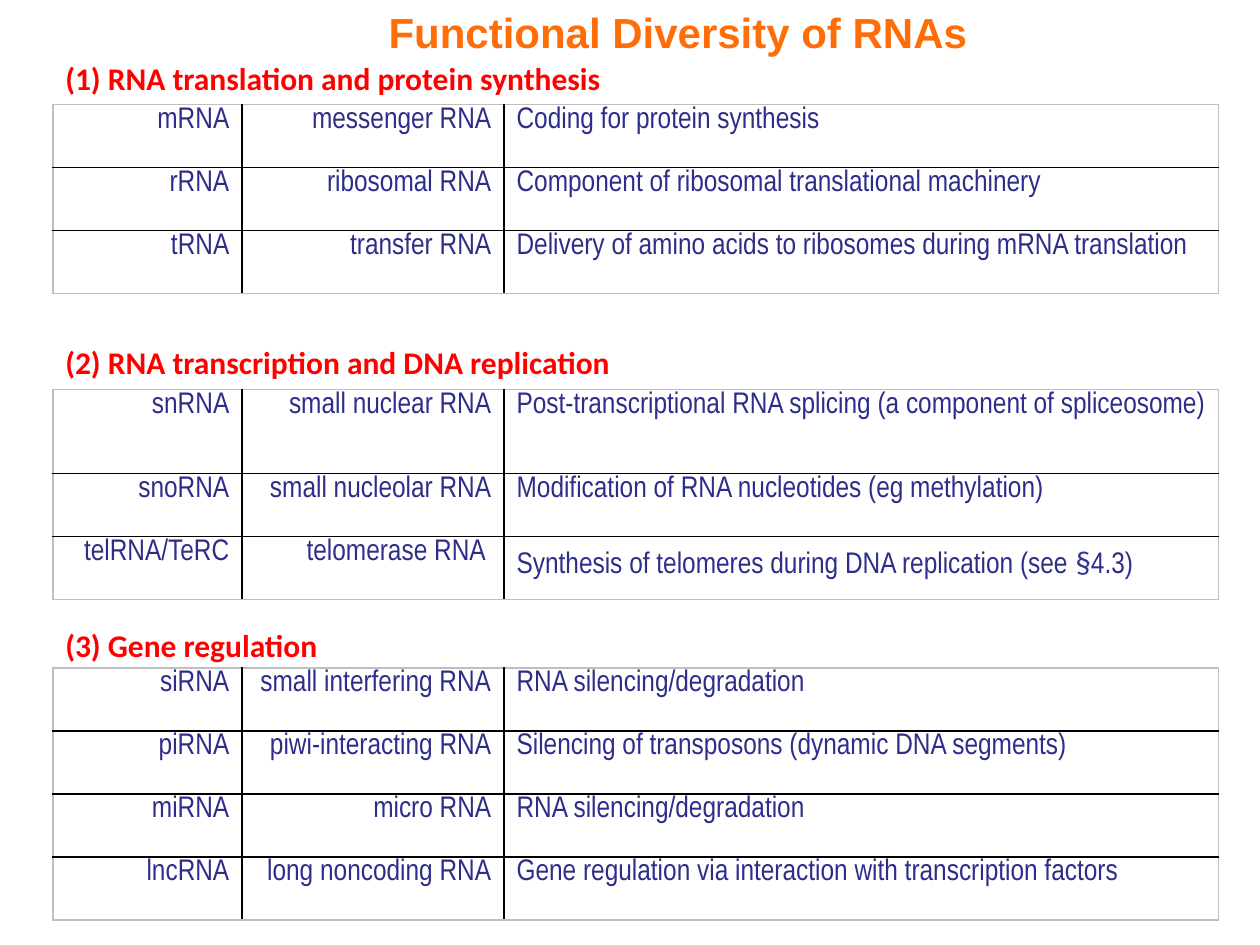
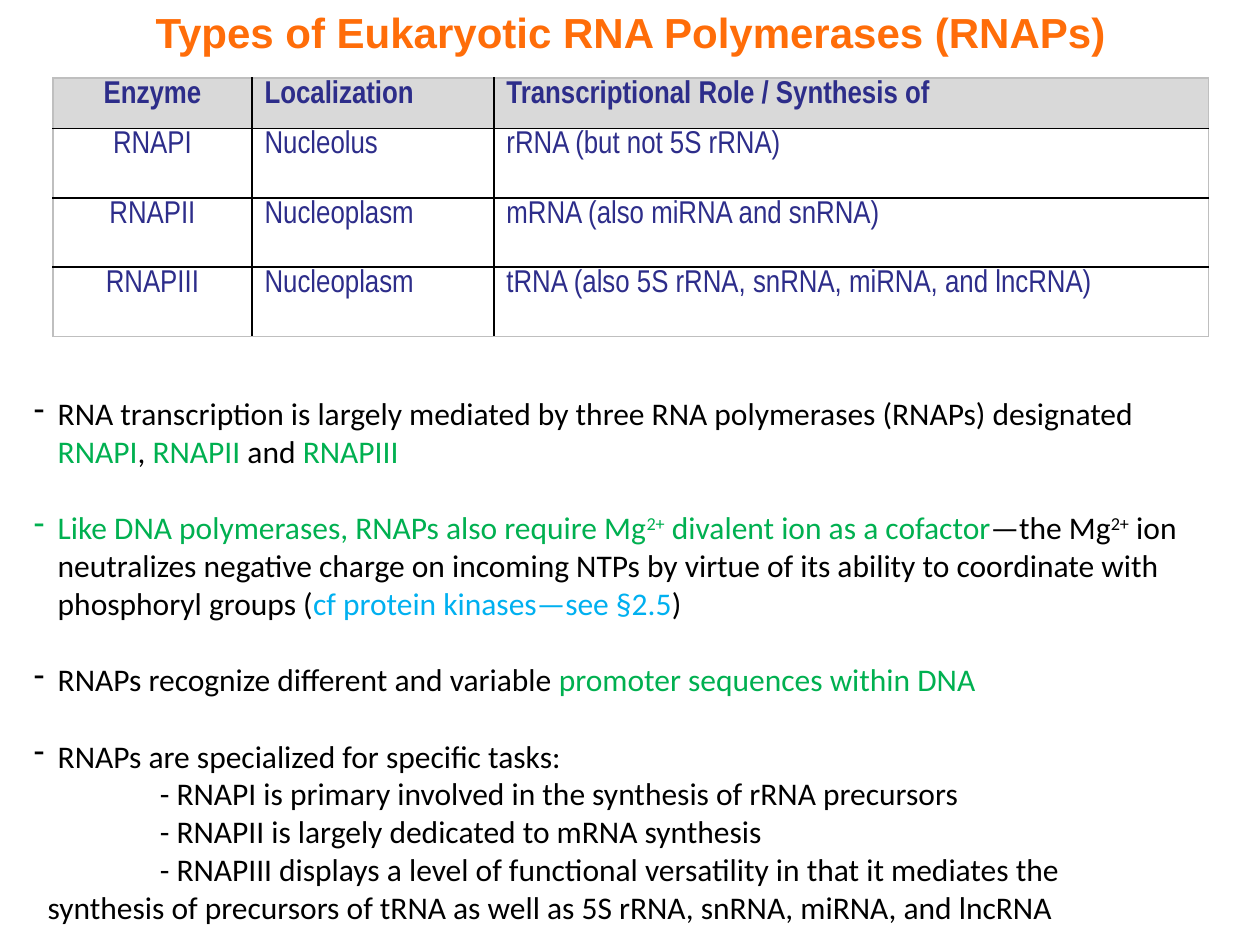
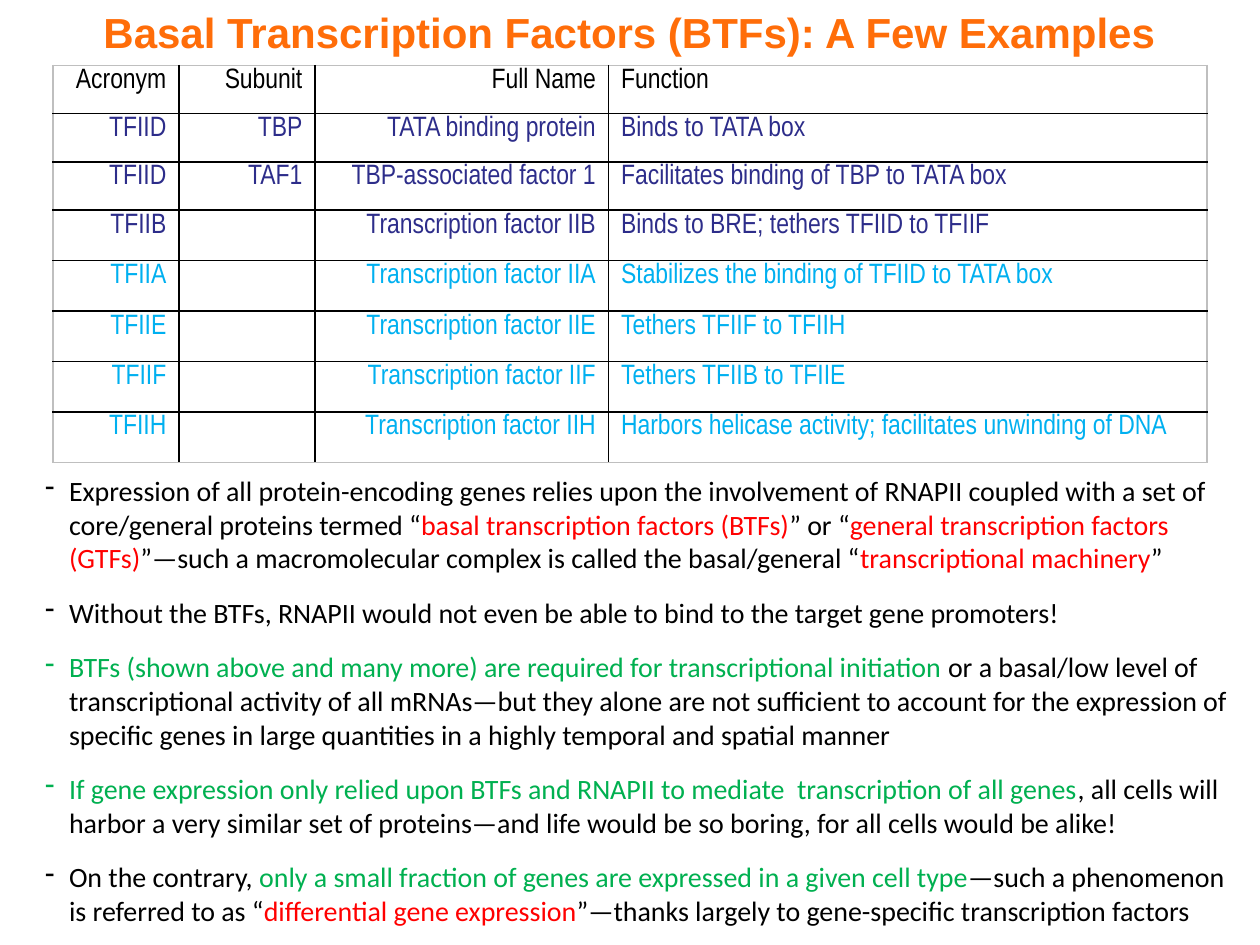
"""Build three slides on RNA types, RNA polymerases and transcription factors."""
import dataclasses

import pptx
import pptx.dml.color
import pptx.enum.text
import pptx.oxml
import pptx.oxml.ns
import pptx.util

Inches = pptx.util.Inches
Pt = pptx.util.Pt
ALIGN = pptx.enum.text.PP_ALIGN
LEFT, CENTER, RIGHT = ALIGN.LEFT, ALIGN.CENTER, ALIGN.RIGHT


@dataclasses.dataclass(frozen=True)
class Theme:
    """Colours, fonts and sizes shared by the slides."""
    orange: str = "FF6D09"
    red: str = "FF0000"
    green: str = "00B050"
    sky: str = "00B0F0"
    navy: str = "2D2D8A"
    indigo: str = "333399"
    black: str = "000000"
    header_fill: str = "D9D9D9"
    frame: str = "BFBFBF"
    title_font: str = "Arial"
    body_font: str = "Calibri"
    table_font: str = "Arial Narrow"
    title_size: int = 24
    large: int = 18
    medium: int = 17
    small: int = 16
    cell_spacing: float = 0.8
    table_left: float = 0.42
    hanging: float = 0.19


THEME = Theme()


@dataclasses.dataclass(frozen=True)
class Style:
    """Look of a run of text."""
    font: str
    size: int
    color: str
    bold: bool = False


@dataclasses.dataclass(frozen=True)
class Span:
    """Piece of text that may depart from its paragraph's style."""
    text: str
    color: str = ""
    font: str = ""
    size: int = 0
    raised: bool = False


def green(text, raised=False):
    """Return a span in the key-point colour."""
    return Span(text, THEME.green, raised=raised)


def red(text):
    """Return a span in the term colour."""
    return Span(text, THEME.red)


def add_spans(para, content, style):
    """Write a string or a list of strings and spans run by run."""
    for piece in [content] if isinstance(content, str) else content:
        span = Span(piece) if isinstance(piece, str) else piece
        run = para.add_run()
        run.text = span.text
        run.font.name = span.font or style.font
        run.font.size = Pt(span.size or style.size)
        run.font.bold = style.bold
        run.font.color.rgb = pptx.dml.color.RGBColor.from_string(span.color or style.color)
        if span.raised:
            run.font._element.set("baseline", "30000")


def add_box(page, left, top, width, height):
    """Add a wrapping text box and return its text frame."""
    frame = page.shapes.add_textbox(
        Inches(left), Inches(top), Inches(width), Inches(height)).text_frame
    frame.word_wrap = True
    return frame


def add_title(page, text, left, width):
    """Add the centred slide title."""
    para = add_box(page, left, 0, width, 0.5).paragraphs[0]
    para.alignment = CENTER
    add_spans(para, text, Style(THEME.title_font, THEME.title_size, THEME.orange, True))


def add_heading(page, text, top):
    """Add the heading above a table."""
    para = add_box(page, THEME.table_left, top, 5.04, 0.4).paragraphs[0]
    add_spans(para, text, Style(THEME.body_font, THEME.large, THEME.red, True))


def set_indent(para, margin, first_line):
    """Set the left margin and first-line indent of a paragraph."""
    properties = para._p.get_or_add_pPr()
    properties.set("marL", str(Inches(margin)))
    properties.set("indent", str(Inches(first_line)))
    return properties


def next_paragraph(frame):
    """Return the unused first paragraph or a new one."""
    first = frame.paragraphs[0]
    return frame.add_paragraph() if first.runs else first


def add_bullets(frame, items, size, gap):
    """Add dash-bulleted paragraphs with a gap between them."""
    for number, item in enumerate(items, 1):
        para = next_paragraph(frame)
        if number < len(items):
            para.space_after = Pt(gap)
        properties = set_indent(para, THEME.hanging, -THEME.hanging)
        bullet = pptx.oxml.parse_xml(
            f'<a:buChar {pptx.oxml.ns.nsdecls("a")} char="-"/>')
        properties.append(bullet)
        add_spans(para, item, Style(THEME.body_font, size, THEME.black))


def add_subpoints(frame, items):
    """Add indented lines, each given as a list of its display lines."""
    for lines in items:
        para = frame.add_paragraph()
        set_indent(para, 0.11, 0.89)
        for number, line in enumerate(lines):
            if number:
                para.add_line_break()
            add_spans(para, line, Style(THEME.body_font, THEME.large, THEME.black))


def add_borders(cell, outer_sides):
    """Draw black inner borders and grey ones on the outer sides."""
    properties = cell._tc.get_or_add_tcPr()
    for position, side in enumerate("LRTB"):
        color = THEME.frame if side in outer_sides else THEME.black
        properties.insert(position, pptx.oxml.parse_xml(
            f'<a:ln{side} {pptx.oxml.ns.nsdecls("a")} w="{Pt(1)}"><a:solidFill>'
            f'<a:srgbClr val="{color}"/></a:solidFill></a:ln{side}>'))


def add_table(page, top, widths, heights, rows, aligns, style_for, header_fill=None):
    """Add a bordered table whose rows take their style from style_for."""
    table = page.shapes.add_table(
        len(rows), len(widths), Inches(THEME.table_left), Inches(top),
        Inches(sum(widths)), Inches(sum(heights))).table
    table.first_row = table.horz_banding = False
    for column, width in zip(table.columns, widths):
        column.width = Inches(width)
    for r, (row, height) in enumerate(zip(rows, heights)):
        table.rows[r].height = Inches(height)
        for c, content in enumerate(row):
            cell = table.cell(r, c)
            if header_fill and r == 0:
                cell.fill.solid()
                cell.fill.fore_color.rgb = pptx.dml.color.RGBColor.from_string(header_fill)
            else:
                cell.fill.background()
            edges = {"L": c == 0, "R": c == len(widths) - 1,
                     "T": r == 0, "B": r == len(rows) - 1}
            add_borders(cell, [side for side, outer in edges.items() if outer])
            para = cell.text_frame.paragraphs[0]
            para.alignment = aligns[c]
            para.line_spacing = THEME.cell_spacing if isinstance(content, str) else 1.0
            add_spans(para, content, style_for(r))


def build_diversity(page):
    """Fill the slide on the functions of RNAs."""
    add_title(page, "Functional Diversity of RNAs", 1.92, 6.92)
    section_mark = Span("§", THEME.indigo, THEME.body_font, THEME.large)
    sections = [
        ("(1) RNA translation and protein synthesis", 0.42, 0.83, 0.5, [
            ("mRNA", "messenger RNA", "Coding for protein synthesis"),
            ("rRNA", "ribosomal RNA", "Component of ribosomal translational machinery"),
            ("tRNA", "transfer RNA",
             "Delivery of amino acids to ribosomes during mRNA translation")]),
        ("(2) RNA transcription and DNA replication", 2.67, 3.09, 0.67, [
            ("snRNA", "small nuclear RNA",
             "Post-transcriptional RNA splicing (a component of spliceosome)"),
            ("snoRNA", "small nucleolar RNA",
             "Modification of RNA nucleotides (eg methylation)"),
            ("telRNA/TeRC", "telomerase RNA ",
             ["Synthesis of telomeres during DNA replication (see ",
              section_mark, "4.3)"])]),
        ("(3) Gene regulation", 4.92, 5.3, 0.5, [
            ("siRNA", "small interfering RNA", "RNA silencing/degradation"),
            ("piRNA", "piwi-interacting RNA",
             "Silencing of transposons (dynamic DNA segments)"),
            ("miRNA", "micro RNA", "RNA silencing/degradation"),
            ("lncRNA", "long noncoding RNA",
             "Gene regulation via interaction with transcription factors")]),
    ]
    style = Style(THEME.table_font, THEME.medium, THEME.navy)
    for heading, heading_top, table_top, first_height, rows in sections:
        add_heading(page, heading, heading_top)
        heights = [first_height] + [0.5] * (len(rows) - 1)
        add_table(page, table_top, [1.5, 2.08, 5.67], heights, rows,
                  [RIGHT, RIGHT, LEFT], lambda row: style)


def build_polymerases(page):
    """Fill the slide on RNA polymerases."""
    add_title(page, "Types of Eukaryotic RNA Polymerases (RNAPs)", 0.67, 8.67)
    rows = [
        ("Enzyme", "Localization", "Transcriptional Role / Synthesis of"),
        ("RNAPI", "Nucleolus", "rRNA (but not 5S rRNA)"),
        ("RNAPII", "Nucleoplasm", "mRNA (also miRNA and snRNA)"),
        ("RNAPIII", "Nucleoplasm", "tRNA (also 5S rRNA, snRNA, miRNA, and lncRNA)"),
    ]
    add_table(page, 0.62, [1.58, 1.92, 5.67], [0.4] + [0.55] * 3, rows,
              [CENTER, LEFT, LEFT],
              lambda row: Style(THEME.table_font, THEME.large, THEME.navy, row == 0),
              THEME.header_fill)
    frame = add_box(page, 0.17, 3.08, 9.67, 4.34)
    add_bullets(frame, [
        ["RNA transcription is largely mediated by three RNA polymerases (RNAPs) designated ",
         green("RNAPI"), ", ", green("RNAPII"), " and ", green("RNAPIII")],
        [green("Like DNA polymerases, RNAPs also require Mg"), green("2+", raised=True),
         green(" divalent ion as a cofactor"), "—the Mg", Span("2+", raised=True),
         " ion neutralizes negative charge on incoming NTPs by virtue of its ability "
         "to coordinate with phosphoryl groups (",
         Span("cf protein kinases—see §2.5", THEME.sky), ")"],
        ["RNAPs recognize different and variable ",
         green("promoter sequences within DNA")],
        "RNAPs are specialized for specific tasks:",
    ], THEME.large, 22)
    add_subpoints(frame, [
        ["- RNAPI is primary involved in the synthesis of rRNA precursors"],
        ["- RNAPII is largely dedicated to mRNA synthesis"],
        ["- RNAPIII displays a level of functional versatility in that it mediates the",
         "synthesis of precursors of tRNA as well as 5S rRNA, snRNA, miRNA, and lncRNA"],
    ])


def build_factors(page):
    """Fill the slide on basal transcription factors."""
    add_title(page, "Basal Transcription Factors (BTFs): A Few Examples", 0.58, 8.83)
    rows = [
        ("Acronym", "Subunit", "Full Name", "Function"),
        ("TFIID", "TBP", "TATA binding protein", "Binds to TATA box"),
        ("TFIID", "TAF1", "TBP-associated factor 1",
         "Facilitates binding of TBP to TATA box"),
    ]
    functions = {
        "B": "Binds to BRE; tethers TFIID to TFIIF",
        "A": "Stabilizes the binding of TFIID to TATA box",
        "E": "Tethers TFIIF to TFIIH",
        "F": "Tethers TFIIB to TFIIE",
        "H": "Harbors helicase activity; facilitates unwinding of DNA",
    }
    rows += [(f"TFII{letter}", "", f"Transcription factor II{letter}", function)
             for letter, function in functions.items()]
    row_colors = [THEME.black] + [THEME.navy] * 3 + [THEME.sky] * 4
    add_table(page, 0.52, [1, 1.08, 2.33, 4.75], [3.06 / len(rows)] * len(rows), rows,
              [RIGHT, RIGHT, RIGHT, LEFT],
              lambda row: Style(THEME.table_font, THEME.small, row_colors[row]))
    add_bullets(add_box(page, 0.26, 3.71, 9.66, 3.74), [
        ["Expression of all protein-encoding genes relies upon the involvement of RNAPII "
         "coupled with a set of core/general proteins termed “",
         red("basal transcription factors (BTFs)"), "” or “",
         red("general transcription factors (GTFs)"),
         "”—such a macromolecular complex is called the basal/general “",
         red("transcriptional machinery"), "”"],
        "Without the BTFs, RNAPII would not even be able to bind to the target gene promoters!",
        [green("BTFs (shown above and many more) are required for transcriptional initiation "),
         "or a basal/low level of transcriptional activity of all mRNAs—but they alone are "
         "not sufficient to account for the expression of specific genes in large quantities "
         "in a highly temporal and spatial manner"],
        [green("If gene expression only relied upon BTFs and RNAPII to mediate  "
               "transcription of all genes"),
         ", all cells will harbor a very similar set of proteins—and life would be so "
         "boring, for all cells would be alike!"],
        ["On the contrary, ",
         green("only a small fraction of genes are expressed in a given cell type"),
         "—such a phenomenon is referred to as “", red("differential gene expression"),
         "”—thanks largely to gene-specific transcription factors"],
    ], THEME.small, 12)


def main():
    """Build and save the deck."""
    deck = pptx.Presentation()
    deck.slide_width, deck.slide_height = Inches(10), Inches(7.5)
    for build in (build_diversity, build_polymerases, build_factors):
        build(deck.slides.add_slide(deck.slide_layouts[6]))
    deck.save("out.pptx")


if __name__ == "__main__":
    main()
